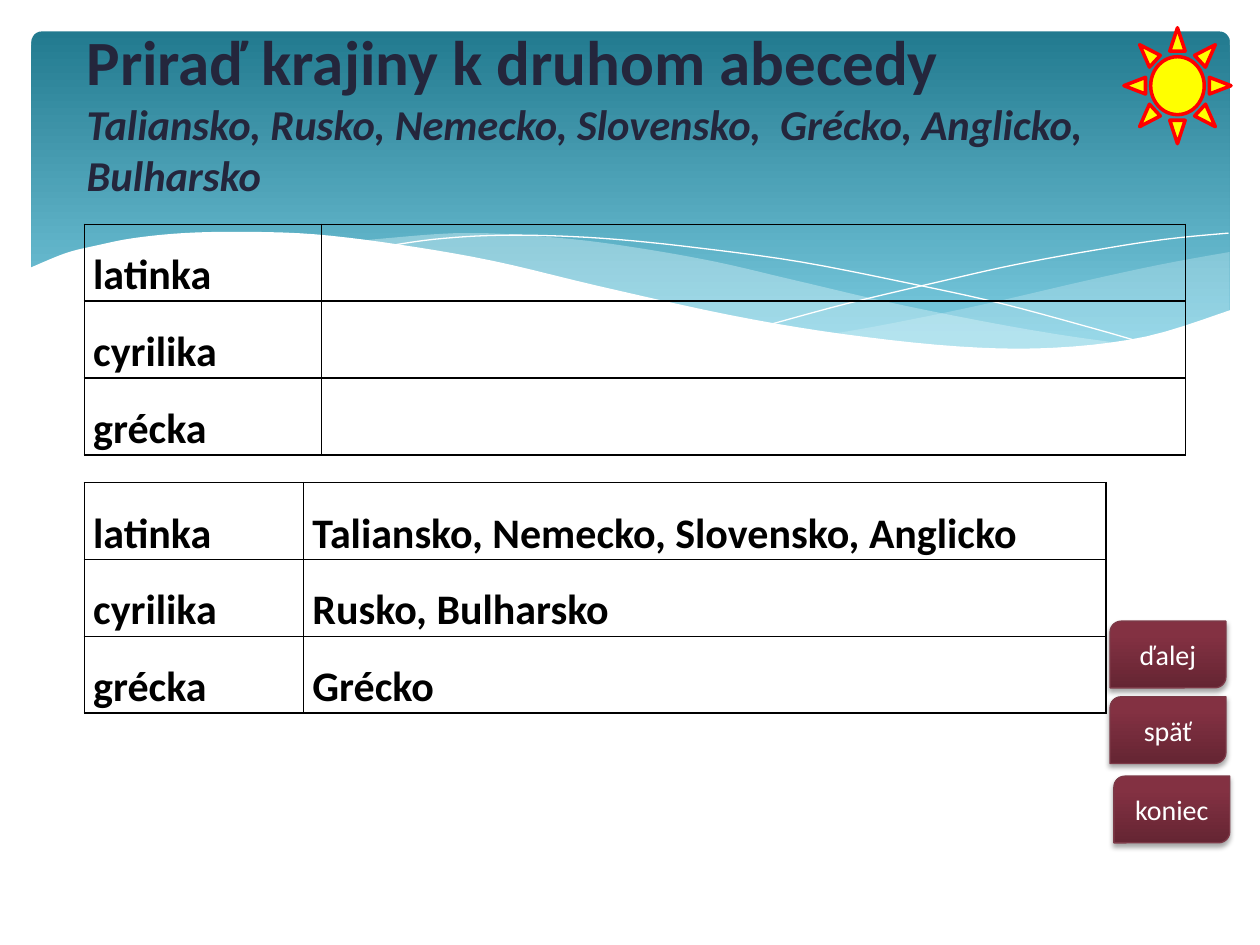
from lxml.etree import SubElement
from pptx import Presentation
from pptx.dml.color import RGBColor
from pptx.enum.shapes import MSO_SHAPE as Preset
from pptx.enum.text import MSO_ANCHOR as Anchor, PP_ALIGN as Align
from pptx.oxml.ns import qn
from pptx.util import Emu, Inches, Pt

WHITE = RGBColor(0xFF, 0xFF, 0xFF)
BLACK = RGBColor(0x00, 0x00, 0x00)
INK = RGBColor(0x24, 0x26, 0x3C)
TEAL = RGBColor(0x22, 0x7A, 0x8F)
AQUA = RGBColor(0x7A, 0xCB, 0xE0)
FOAM = RGBColor(0xDE, 0xF5, 0xFA)
WINE_DARK = RGBColor(0x65, 0x25, 0x33)
WINE = RGBColor(0x83, 0x31, 0x42)
WINE_LIGHT = RGBColor(0x85, 0x2F, 0x42)
WINE_EDGE = RGBColor(0x7C, 0x39, 0x47)
YELLOW = RGBColor(0xFF, 0xFF, 0x00)
RED = RGBColor(0xFF, 0x00, 0x00)

RIGHT_TOP = [(97.6, 20), (92.1, 21), (86.1, 22.3), (77.9, 24.2), (70.6, 25.7), (66.1, 26.5)]
RIGHT_BOTTOM = [(66.1, 26.5), (70.5, 27.1), (75.7, 27.6), (80.3, 27.8), (84.4, 27.7),
                (88.1, 27.4), (91.3, 26.7), (94.2, 25.9), (97.6, 24.7)]
MIDDLE_TOP = [(89.3, 27.3), (83.7, 26.5), (77.5, 25.4), (70.6, 24), (62.9, 22.2), (56.9, 20.8),
              (51.4, 19.8), (46.5, 19.1), (42, 18.7), (38, 18.5), (34.4, 18.6), (28.6, 19.1)]
MIDDLE_BOTTOM = [(28.6, 19.1), (34.2, 19.9), (40.4, 21.1), (44.9, 22.2), (53, 24), (60.1, 25.5),
                 (66.5, 26.6), (72.2, 27.4), (77.3, 27.7), (81.8, 27.8), (85.7, 27.7), (89.3, 27.3)]
FALLING_LINE = [(30.9, 19.5), (34.4, 19), (38.7, 18.7), (43.3, 18.7), (48.9, 19), (55.6, 19.7),
                (63.6, 20.8), (72.7, 22.6), (79.5, 24.1), (86.9, 26.1), (90.7, 27.2)]
RISING_LINE = [(61.3, 25.7), (67.2, 24.1), (74.8, 22.3), (80.6, 21), (86.6, 19.9),
               (92.4, 19), (97.5, 18.5)]
SHORE = [(97.7, 24.6), (91, 26.7), (83.7, 27.6), (76.1, 27.5), (66.8, 26.5), (57.9, 25),
         (47.5, 22.7), (39.1, 20.7), (31.6, 19.4), (25, 18.6), (19.3, 18.4), (14.6, 18.5),
         (10.6, 18.9), (7.6, 19.5), (5.2, 20.1), (2.3, 21.3)]
SHORE_BASE = [(2.3, 32.9), (97.7, 32.9)]

ALPHABETS = ["latinka", "cyrilika", "grécka"]
COUNTRIES = ["Taliansko, Nemecko, Slovensko, Anglicko", "Rusko, Bulharsko", "Grécko"]


def curve(knots, steps=5):
    """Return points of a smooth curve through the knots."""
    ends = [knots[0], *knots, knots[-1]]
    points = [knots[0]]
    for a, b, c, d in zip(ends, ends[1:], ends[2:], ends[3:]):
        for step in range(1, steps + 1):
            t = step / steps
            points.append(tuple(
                (2 * q + (r - p) * t + (2 * p - 5 * q + 4 * r - s) * t ** 2
                 + (3 * q - p - 3 * r + s) * t ** 3) / 2
                for p, q, r, s in zip(a, b, c, d)))
    return points


class Board:
    """Draws styled elements on a slide grid of 100 columns by 75 rows."""

    font = "Calibri"
    columns, rows = 100, 75

    def __init__(self, deck):
        self.slide = deck.slides.add_slide(deck.slide_layouts[6])
        self.shapes = self.slide.shapes
        self.column = deck.slide_width / self.columns
        self.row = deck.slide_height / self.rows

    def place(self, x, y, width, height):
        return (Emu(round(x * self.column)), Emu(round(y * self.row)),
                Emu(round(width * self.column)), Emu(round(height * self.row)))

    def letter(self, paragraph, text, size, color, bold=False, italic=False):
        run = paragraph.add_run()
        run.text = text
        run.font.name, run.font.size = self.font, Pt(size)
        run.font.bold, run.font.italic = bold, italic
        run.font.color.rgb = color

    def preset(self, kind, box):
        shape = self.shapes.add_shape(kind, *self.place(*box))
        shape.shadow.inherit = False
        shape.line.fill.background()
        return shape

    def shade(self, shape, stops, angle):
        shape.fill.gradient()
        shape.fill.gradient_angle = angle
        stop_list = shape._element.spPr.find(f".//{qn('a:gsLst')}")
        stop_list.clear()
        for position, color in stops:
            stop = SubElement(stop_list, qn("a:gs"), pos=str(position * 1000))
            SubElement(stop, qn("a:srgbClr"), val=str(color))

    def outline(self, shape, color, width):
        shape.line.color.rgb = color
        shape.line.width = Pt(width)

    def sky(self, box):
        panel = self.preset(Preset.ROUNDED_RECTANGLE, box)
        panel.adjustments[0] = 0.03
        self.shade(panel, [(0, TEAL), (90, AQUA)], 270)

    def trace(self, points, close):
        spots = [self.place(x, y, 0, 0)[:2] for x, y in points]
        builder = self.shapes.build_freeform(*spots[0], scale=1.0)
        builder.add_line_segments(spots[1:], close=close)
        shape = builder.convert_to_shape()
        shape.shadow.inherit = False
        return shape

    def wave(self, points, color, opacity=100):
        area = self.trace(points, True)
        area.fill.solid()
        area.fill.fore_color.rgb = color
        area.line.fill.background()
        if opacity < 100:
            tint = area._element.spPr.find(f"{qn('a:solidFill')}/{qn('a:srgbClr')}")
            SubElement(tint, qn("a:alpha"), val=str(opacity * 1000))

    def ripple(self, points):
        thread = self.trace(points, False)
        thread.fill.background()
        self.outline(thread, WHITE, 0)

    def sun(self, box):
        star = self.preset(Preset.SUN, box)
        star.fill.solid()
        star.fill.fore_color.rgb = YELLOW
        self.outline(star, RED, 2)

    def button(self, label, x, y):
        key = self.preset(Preset.ROUND_2_DIAG_RECTANGLE, (x, y, 9.2, 5.3))
        self.shade(key, [(0, WINE_DARK), (80, WINE), (100, WINE_LIGHT)], 90)
        self.outline(key, WINE_EDGE, 0.75)
        effects = key._element.spPr.find(qn("a:effectLst"))
        shadow = SubElement(effects, qn("a:outerShdw"), blurRad=str(Pt(3.1)),
                            dist=str(Pt(1.8)), dir="5400000", rotWithShape="0")
        tone = SubElement(shadow, qn("a:srgbClr"), val=str(BLACK))
        SubElement(tone, qn("a:alpha"), val="35000")
        frame = key.text_frame
        frame.vertical_anchor = Anchor.MIDDLE
        frame.margin_left = frame.margin_right = 0
        frame.paragraphs[0].alignment = Align.CENTER
        self.letter(frame.paragraphs[0], label, 16, WHITE)

    def title(self, heading, countries, box):
        frame = self.shapes.add_textbox(*self.place(*box)).text_frame
        frame.word_wrap = True
        frame.vertical_anchor = Anchor.MIDDLE
        frame.margin_top, frame.margin_bottom = 0, Inches(0.33)
        paragraph = frame.paragraphs[0]
        self.letter(paragraph, heading, 36, INK, bold=True)
        paragraph.add_line_break()
        self.letter(paragraph, countries, 24.3, INK, bold=True, italic=True)

    def border(self, cell):
        properties = cell._tc.get_or_add_tcPr()
        for side in ("a:lnL", "a:lnR", "a:lnT", "a:lnB"):
            edge = SubElement(properties, qn(side), w=str(Pt(1)))
            ink = SubElement(edge, qn("a:solidFill"))
            SubElement(ink, qn("a:srgbClr"), val=str(BLACK))

    def table(self, entries, x, y, widths, row_height):
        box = self.place(x, y, sum(widths), row_height * len(entries))
        grid = self.shapes.add_table(len(entries), len(widths), *box).table
        grid.first_row = grid.horz_banding = False
        for column, width in zip(grid.columns, widths):
            column.width = Emu(round(width * self.column))
        for r, entry in enumerate(entries):
            for c, text in enumerate(entry):
                cell = grid.cell(r, c)
                self.border(cell)
                cell.fill.background()
                cell.margin_left = cell.margin_right = Inches(0.07)
                cell.margin_top = cell.margin_bottom = 0
                if text:
                    paragraph = cell.text_frame.paragraphs[0]
                    paragraph.line_spacing = 1.5
                    paragraph.space_after = Pt(10)
                    self.letter(paragraph, text, 24, BLACK, bold=True)


def main():
    deck = Presentation()
    deck.slide_width, deck.slide_height = Inches(10), Inches(7.5)
    board = Board(deck)
    board.sky((2.5, 2.5, 95.1, 27))
    board.wave(curve(RIGHT_TOP) + curve(RIGHT_BOTTOM), FOAM, 29)
    board.wave(curve(MIDDLE_TOP) + curve(MIDDLE_BOTTOM), FOAM, 40)
    for knots in (FALLING_LINE, RISING_LINE):
        board.ripple(curve(knots))
    board.wave(curve(SHORE) + SHORE_BASE, WHITE)
    for label, x, y in (("koniec", 88.4, 61.6), ("späť", 88.1, 55.3), ("ďalej", 88.1, 49.3)):
        board.button(label, x, y)
    board.sun((89.2, 2.2, 8.5, 9.2))
    board.title("Priraď krajiny k druhom abecedy",
                "Taliansko, Rusko, Nemecko, Slovensko,  Grécko, Anglicko, Bulharsko",
                (5.9, 3.6, 90, 13.7))
    board.table([(name, "") for name in ALPHABETS], 6.7, 17.8, (18.8, 68.6), 6.1)
    board.table(list(zip(ALPHABETS, COUNTRIES)), 6.7, 38.3, (17.4, 63.7), 6.1)
    deck.save("out.pptx")


if __name__ == "__main__":
    main()
